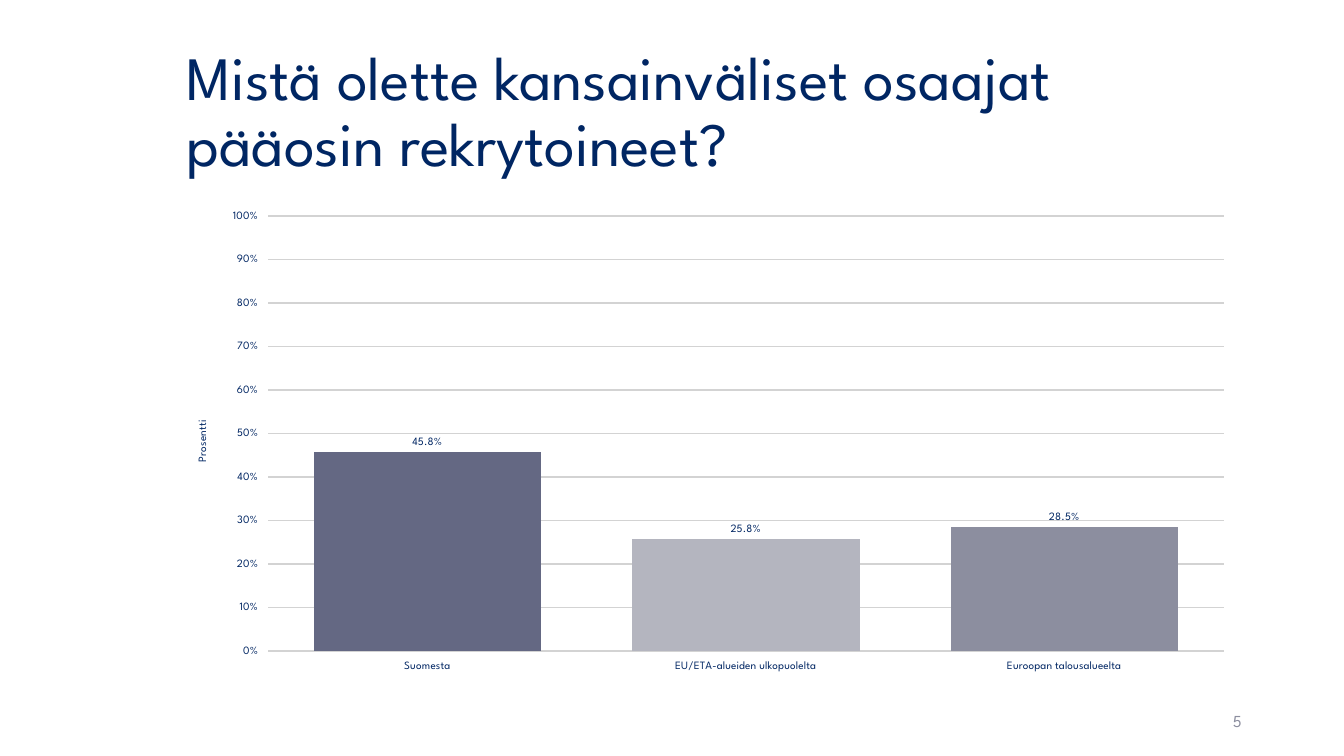
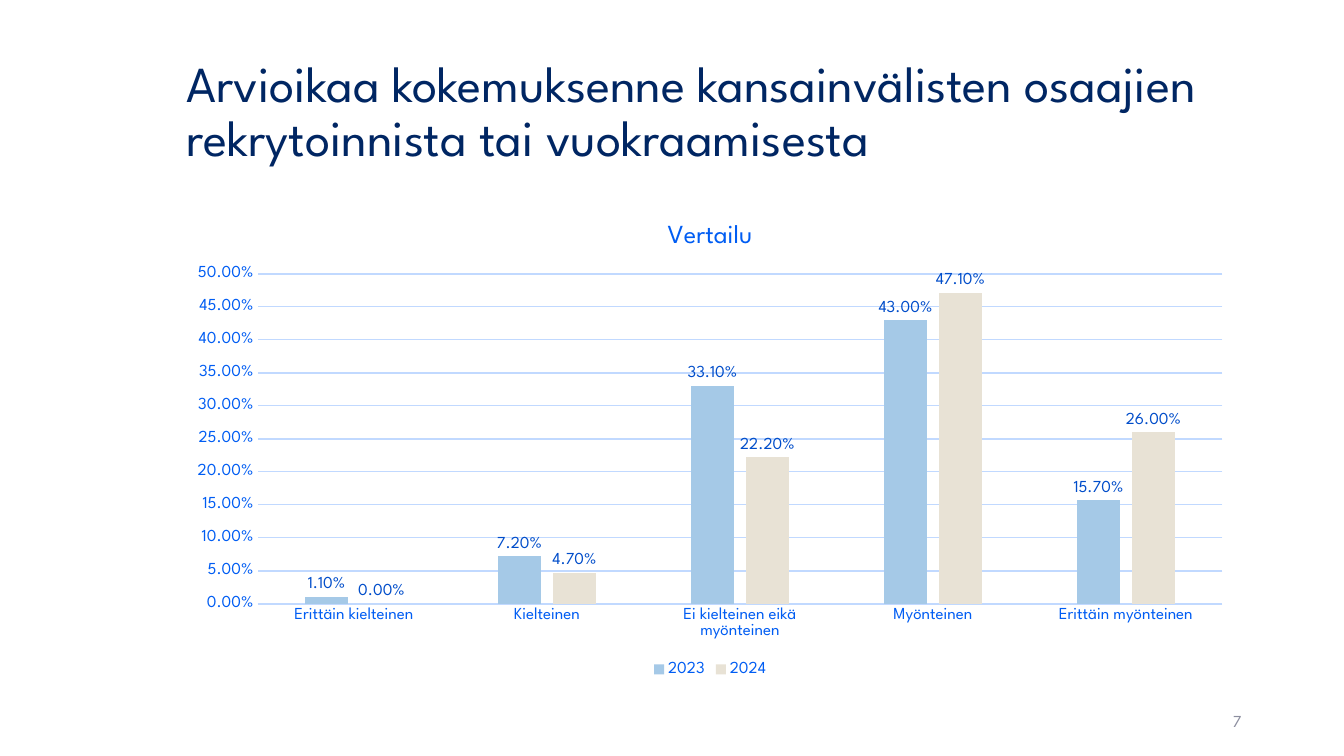
from lxml.etree import SubElement
from pptx import Presentation
from pptx.chart.data import CategoryChartData
from pptx.dml.color import RGBColor
from pptx.enum.chart import (XL_CHART_TYPE, XL_LABEL_POSITION,
                             XL_LEGEND_POSITION, XL_TICK_MARK)
from pptx.enum.text import MSO_ANCHOR, MSO_AUTO_SIZE, PP_ALIGN
from pptx.oxml.ns import qn
from pptx.util import Pt

NAVY, BLUE, ROYAL = "002663", "005DF3", "004DCA"
SLATE, GREY, MIST = "646883", "8C8E9F", "B4B5BF"
SKY, SAND = "A5C9E7", "E8E2D5"
RULE, PALE = "D3D3D3", "C1D9FF"
FACE = "League Spartan"
LEFT, WIDTH = 126, 762.5


def paint(target, color):
    """Give a fill or line format a solid colour."""
    fill = target.fill
    fill.solid()
    fill.fore_color.rgb = RGBColor.from_string(color)


class Deck:
    def __init__(self):
        self.prs = Presentation()
        self.prs.slide_width, self.prs.slide_height = Pt(960), Pt(540)
        self.slide = None

    def style(self, font, size, color):
        font.name, font.size, font.bold = FACE, Pt(size), False
        font.color.rgb = RGBColor.from_string(color)

    def add(self, title, size, number):
        """Start a slide with its title and page number."""
        self.slide = self.prs.slides.add_slide(self.prs.slide_layouts[5])
        self.text(self.slide.shapes.title, (LEFT, 28.8, WIDTH, 104.4),
                  title, size, NAVY, PP_ALIGN.LEFT, 0.9)
        box = self.slide.shapes.add_textbox(0, 0, 0, 0)
        self.text(box, (678, 500.5, 216, 28.8), number, 12, GREY, PP_ALIGN.RIGHT)

    def text(self, shape, at, words, size, color, align, spacing=1.0):
        shape.left, shape.top, shape.width, shape.height = map(Pt, at)
        frame = shape.text_frame
        frame.text = words
        frame.word_wrap = True
        frame.auto_size = MSO_AUTO_SIZE.NONE
        frame.vertical_anchor = MSO_ANCHOR.MIDDLE
        para = frame.paragraphs[0]
        para.alignment, para.line_spacing = align, spacing
        self.style(para.font, size, color)

    def chart(self, cats, series, gap, overlap, plot):
        """Add clustered columns; plot is the inner area as chart fractions."""
        data = CategoryChartData()
        data.categories = cats
        for name, values in series:
            data.add_series(name, values)
        chart = self.slide.shapes.add_chart(
            XL_CHART_TYPE.COLUMN_CLUSTERED,
            *map(Pt, (LEFT, 144, WIDTH, 342.7)), data).chart
        chart.has_title = chart.has_legend = False
        bars = chart.plots[0]
        bars.gap_width, bars.overlap = gap, overlap
        bars.vary_by_categories = False
        self.place(chart, plot)
        return chart

    def place(self, chart, plot):
        area = chart.element.find(".//" + qn("c:plotArea"))
        for old in area.findall(qn("c:layout")):
            area.remove(old)
        layout = SubElement(area, qn("c:layout"))
        area.insert(0, layout)
        manual = SubElement(layout, qn("c:manualLayout"))
        parts = [("layoutTarget", "inner"), ("xMode", "edge"), ("yMode", "edge")]
        for tag, val in parts + list(zip("xywh", plot)):
            SubElement(manual, qn("c:" + tag)).set("val", str(val))

    def axes(self, chart, size, color, grid, width, top, step, form, tick):
        cat, val = chart.category_axis, chart.value_axis
        for axis in (cat, val):
            axis.major_tick_mark = tick
            axis.minor_tick_mark = XL_TICK_MARK.NONE
            axis.format.line.fill.background()
            self.style(axis.tick_labels.font, size, color)
        val.minimum_scale, val.maximum_scale, val.major_unit = 0, top, step
        val.tick_labels.number_format = form
        val.tick_labels.number_format_is_linked = False
        val.has_major_gridlines = True
        line = val.major_gridlines.format.line
        paint(line, grid)
        line.width = Pt(width)

    def labels(self, series, size, color, form):
        tags = series.data_labels
        tags.show_value = True
        tags.position = XL_LABEL_POSITION.OUTSIDE_END
        tags.number_format, tags.number_format_is_linked = form, False
        self.style(tags.font, size, color)

    def name(self, owner, words, size, color, turn=0):
        """Title a chart or an axis."""
        owner.has_title = True
        title = owner.chart_title if hasattr(owner, "chart_title") else owner.axis_title
        frame = title.text_frame
        frame.text = words
        self.style(frame.paragraphs[0].font, size, color)
        if turn:
            frame._txBody.bodyPr.set("rot", str(turn * 60000))

    def legend(self, chart, size, color):
        chart.has_legend = True
        chart.legend.position = XL_LEGEND_POSITION.BOTTOM
        chart.legend.include_in_layout = False
        self.style(chart.legend.font, size, color)


def main():
    deck = Deck()

    # Where recruits come from
    deck.add("Mistä olette kansainväliset osaajat pääosin rekrytoineet?", 44, "5")
    chart = deck.chart(
        ["Suomesta", "EU/ETA-alueiden ulkopuolelta", "Euroopan talousalueelta"],
        [("Series 1", (0.458, 0.258, 0.285))], 40, -2, (0.086, 0.03, 0.895, 0.907))
    deck.style(chart.font, 18, NAVY)
    deck.axes(chart, 8, NAVY, RULE, 1, 1, 0.1, "0%", XL_TICK_MARK.OUTSIDE)
    deck.name(chart.value_axis, "Prosentti", 8, NAVY, -90)
    bars = chart.plots[0].series[0]
    for i, color in enumerate((SLATE, MIST, GREY)):
        paint(bars.points[i].format, color)
    deck.labels(bars, 8, NAVY, "0.0%")

    # Experience by year
    deck.add("Arvioikaa kokemuksenne kansainvälisten osaajien "
             "rekrytoinnista tai vuokraamisesta", 36, "7")
    chart = deck.chart(
        ["Erittäin kielteinen", "Kielteinen", "Ei kielteinen eikä myönteinen",
         "Myönteinen", "Erittäin myönteinen"],
        [("2023", (0.011, 0.072, 0.331, 0.43, 0.157)),
         ("2024", (0, 0.047, 0.222, 0.471, 0.26))],
        219, -27, (0.076, 0.151, 0.904, 0.688))
    deck.style(chart.font, 10, NAVY)
    deck.axes(chart, 12, BLUE, PALE, 0.75, 0.5, 0.05, "0.00%", XL_TICK_MARK.NONE)
    base = chart.category_axis.format.line
    paint(base, PALE)
    base.width = Pt(0.75)
    deck.name(chart, "Vertailu", 18.6, BLUE)
    deck.legend(chart, 12, BLUE)
    for bars, color in zip(chart.plots[0].series, (SKY, SAND)):
        paint(bars.format, color)
        deck.labels(bars, 12, ROYAL, "0.00%")

    deck.prs.save("out.pptx")


if __name__ == "__main__":
    main()
